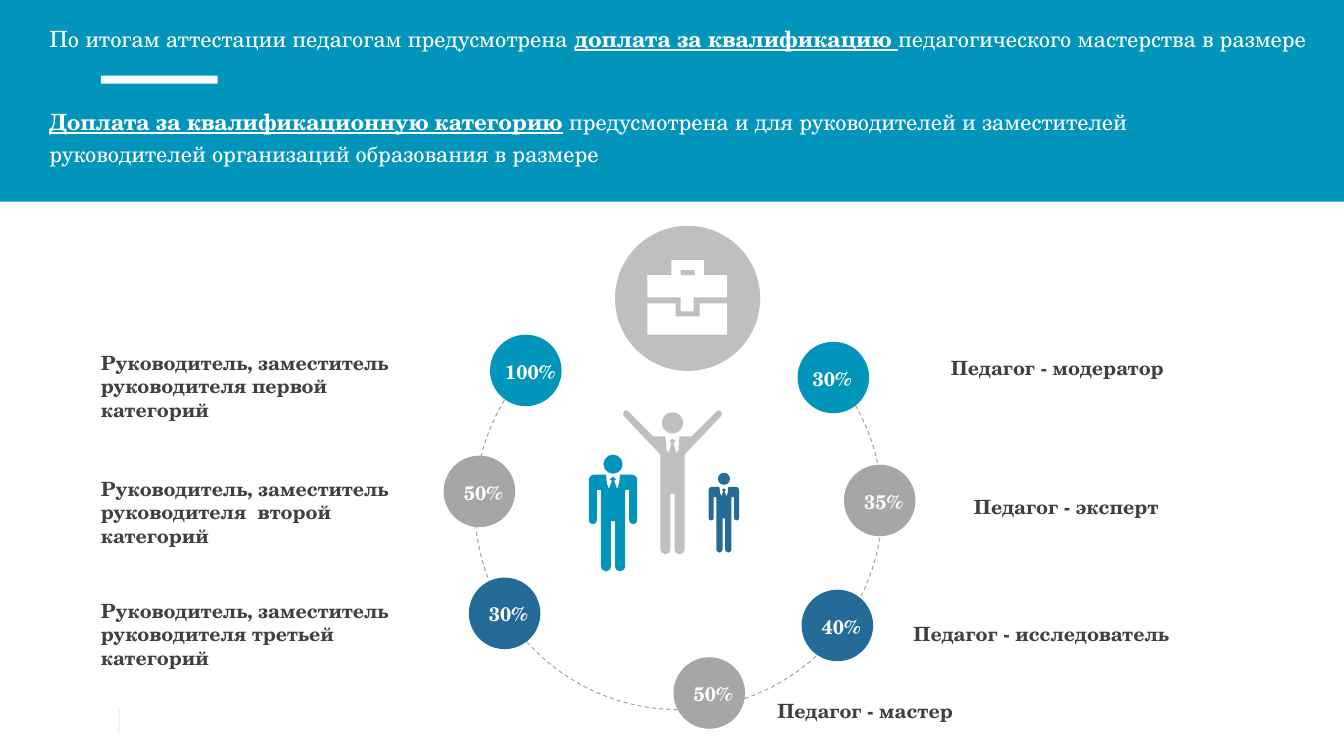
import math

from pptx import Presentation
from pptx.dml.color import RGBColor
from pptx.enum import dml, shapes, text
from pptx.oxml import parse_xml
from pptx.util import Inches, Pt

COLORS = {"blue": "0195BC", "navy": "246C97", "gray": "A6A6A6", "silver": "BFBFBF",
          "arc": "A5A5A5", "tick": "F2F2F2", "dark": "404040", "white": "FFFFFF"}
FONT = "TeX Gyre Schola"
OVAL = shapes.MSO_SHAPE.OVAL
RECTANGLE = shapes.MSO_SHAPE.RECTANGLE

presentation = Presentation()
presentation.slide_width = Inches(13.33)
presentation.slide_height = Inches(7.5)
slide = presentation.slides.add_slide(presentation.slide_layouts[6])


def add_filled(outline, color, left=0, top=0, width=0, height=0):
    """Add a preset shape, or a closed freeform if outline is a list of points in inches."""
    if isinstance(outline, list):
        points = [(Inches(x), Inches(y)) for x, y in outline]
        builder = slide.shapes.build_freeform(*points[0], scale=1.0)
        builder.add_line_segments(points[1:], close=True)
        shape = builder.convert_to_shape()
    else:
        shape = slide.shapes.add_shape(
            outline, Inches(left), Inches(top), Inches(width), Inches(height))
    shape.shadow.inherit = False
    shape.fill.solid()
    shape.fill.fore_color.rgb = RGBColor.from_string(COLORS[color])
    shape.line.fill.background()


def add_text(runs, left, top, width, height, color, size=14, spacing=1.2, before=0):
    """Add a text box from (wording, emphasised) runs."""
    box = slide.shapes.add_textbox(Inches(left), Inches(top), Inches(width), Inches(height))
    frame = box.text_frame
    frame.word_wrap = True
    frame.auto_size = text.MSO_AUTO_SIZE.SHAPE_TO_FIT_TEXT
    frame.margin_left = frame.margin_right = frame.margin_top = frame.margin_bottom = 0
    paragraph = frame.paragraphs[0]
    paragraph.line_spacing = spacing
    paragraph.space_before = Pt(before)
    paragraph.font.name = FONT
    paragraph.font.size = Pt(size)
    paragraph.font.color.rgb = RGBColor.from_string(COLORS[color])
    paragraph.font.bold = len(runs) == 1
    for wording, emphasised in runs:
        run = paragraph.add_run()
        run.text = wording
        if emphasised:
            run.font.bold = run.font.underline = True


# Footer tick
tick = slide.shapes.add_connector(
    shapes.MSO_CONNECTOR.STRAIGHT, Inches(1.18), Inches(7.03), Inches(1.18), Inches(7.28))
tick.line.color.rgb = RGBColor.from_string(COLORS["tick"])
tick.line.width = Pt(1)
tick._element.spPr.append(parse_xml(
    '<a:effectLst xmlns:a="http://schemas.openxmlformats.org/drawingml/2006/main"/>'))

# Dashed arc, open at the top
arc_points = [(Inches(6.73 + 2.02 * math.cos(math.radians(angle))),
               Inches(5.02 + 2.02 * math.sin(math.radians(angle))))
              for angle in range(-50, 231, 2)]
builder = slide.shapes.build_freeform(*arc_points[0], scale=1.0)
builder.add_line_segments(arc_points[1:], close=False)
arc = builder.convert_to_shape()
arc.shadow.inherit = False
arc.fill.background()
arc.line.color.rgb = RGBColor.from_string(COLORS["arc"])
arc.line.width = Pt(0.75)
arc.line.dash_style = dml.MSO_LINE.DASH

# People: right half of each body, measured from the centre line and the top
STANDING = [(0, 0.02), (0.03, 0.05), (0.01, 0.06), (0.04, 0.14), (0.06, 0.09), (0.07, 0),
            (0.19, 0), (0.22, 0.01), (0.24, 0.04), (0.24, 0.45), (0.23, 0.48), (0.2, 0.49),
            (0.17, 0.48), (0.16, 0.45), (0.16, 0.15), (0.12, 0.15), (0.12, 0.91),
            (0.11, 0.94), (0.07, 0.96), (0.03, 0.94), (0.02, 0.91), (0.02, 0.46), (0, 0.46)]
CHEERING = [(0, 0.28), (0.03, 0.31), (0.01, 0.33), (0.04, 0.43), (0.06, 0.39), (0.07, 0.26),
            (0.19, 0.26), (0.44, 0.01), (0.46, 0), (0.48, 0.01), (0.49, 0.04), (0.48, 0.06),
            (0.12, 0.44), (0.12, 1.37), (0.11, 1.41), (0.07, 1.43), (0.03, 1.41),
            (0.02, 1.37), (0.02, 0.83), (0, 0.83)]
people = [  # half body, centre, top, scale across, scale down, head top, head size, colour
    (STANDING, 7.18, 4.83, 0.63, 0.68, 4.69, 0.12, "navy"),
    (STANDING, 6.08, 4.71, 1, 1, 4.51, 0.19, "blue"),
    (CHEERING, 6.67, 4.07, 1, 1, 4.09, 0.21, "silver"),
]
for half, center, top, across, down, head_top, head, color in people:
    add_filled(OVAL, color, center - head / 2, head_top, head, head)
    body = half + [(-x, y) for x, y in reversed(half)]
    add_filled([(center + x * across, top + y * down) for x, y in body], color)

# Roles
for role, left, top, width in [("модератор", 9.43, 3.48, 2.69), ("эксперт", 9.66, 4.86, 2.69),
                               ("исследователь", 9.06, 6.12, 2.69), ("мастер", 7.71, 6.89, 2)]:
    add_text([(f"Педагог - {role}", False)], left, top, width, 0.26, "dark", before=2.2)
for rank, top, width in [(" первой", 3.48, 3.21), ("  второй", 4.73, 3.12),
                         (" третьей", 5.94, 3.29)]:
    add_text([(f"Руководитель, заместитель руководителя{rank} категорий", False)],
             1, top, width, 0.71, "dark", spacing=1)

# Briefcase badge
add_filled(OVAL, "silver", 6.1, 2.24, 1.44, 1.44)
add_filled([(6.42, 3.01), (6.7, 3.01), (6.7, 3.14), (6.94, 3.14), (6.94, 3.01),
            (7.21, 3.01), (7.21, 3.32), (6.42, 3.32)], "white")
add_filled([(6.42, 2.73), (6.66, 2.73), (6.66, 2.58), (6.98, 2.58), (6.98, 2.73),
            (7.21, 2.73), (7.21, 2.95), (6.88, 2.95), (6.88, 3.09), (6.75, 3.09),
            (6.75, 2.95), (6.42, 2.95)], "white")
add_filled(RECTANGLE, "silver", 6.75, 2.68, 0.14, 0.05)

# Header
add_filled(RECTANGLE, "blue", 0, 0, 13.33, 2)
add_text([("По итогам аттестации педагогам предусмотрена ", False),
          ("доплата за квалификацию ", True),
          ("педагогического мастерства в размере", False)],
         0.49, 0.2, 12.64, 0.29, "white", size=16)
add_filled(RECTANGLE, "white", 1, 0.75, 1.16, 0.08)
add_text([("Доплата за квалификационную категорию", True),
          (" предусмотрена и для руководителей и заместителей "
           "руководителей организаций образования в размере", False)],
         0.49, 1.02, 12.17, 0.62, "white", size=16)

# Percentages: wording, left and top of the circle, text indent, colour
for percent, left, top, indent, color in [
        ("100%", 4.86, 3.32, 0.15, "blue"), ("50%", 4.4, 4.52, 0.2, "gray"),
        ("30%", 4.65, 5.73, 0.2, "navy"), ("30%", 7.91, 3.39, 0.15, "blue"),
        ("35%", 8.37, 4.61, 0.2, "gray"), ("40%", 7.95, 5.85, 0.2, "navy"),
        ("50%", 6.68, 6.52, 0.2, "gray")]:
    add_filled(OVAL, color, left, top, 0.71, 0.71)
    add_text([(percent, False)], left + indent, top + 0.2, 0.57, 0.26, "white", before=2.2)

presentation.save("out.pptx")
